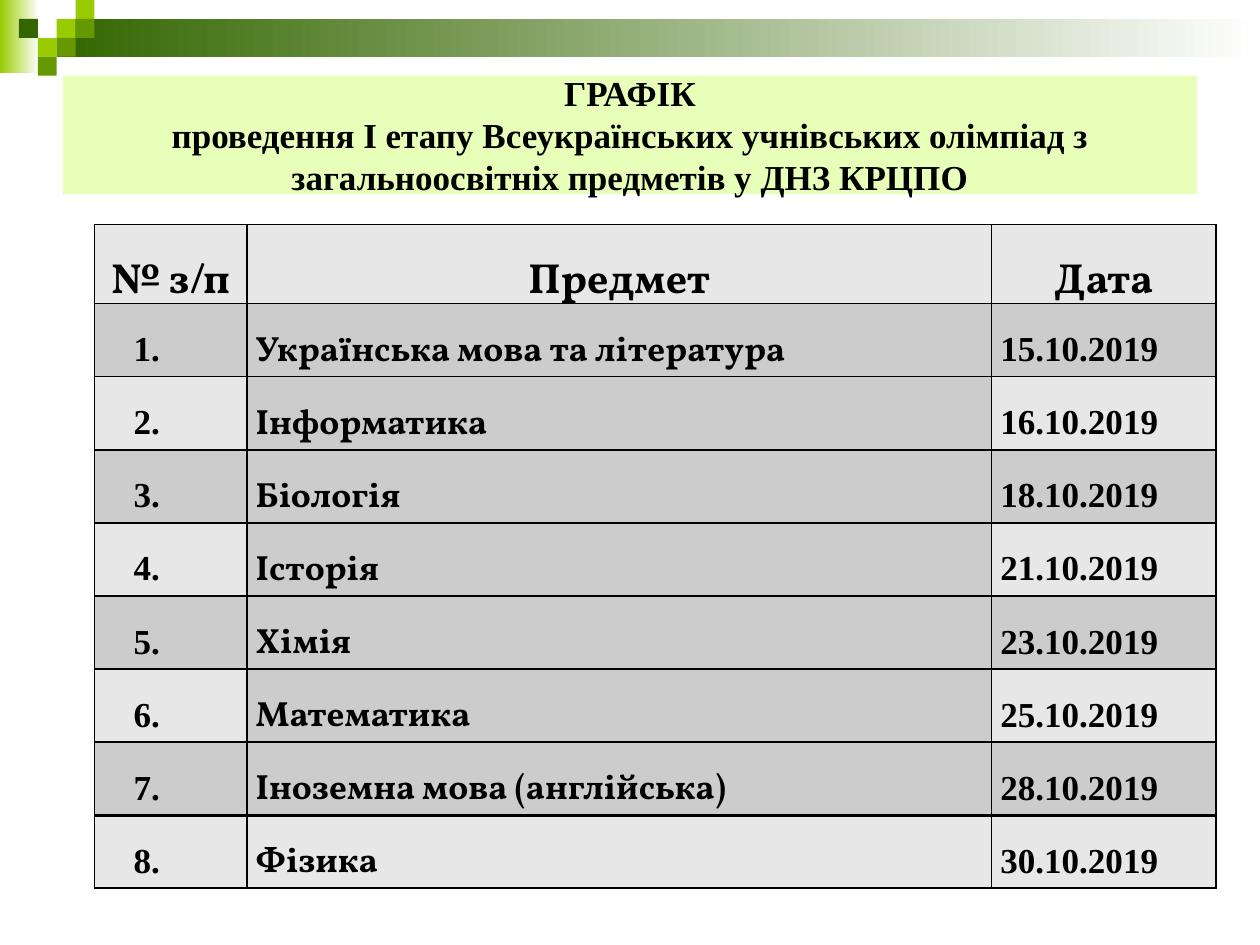
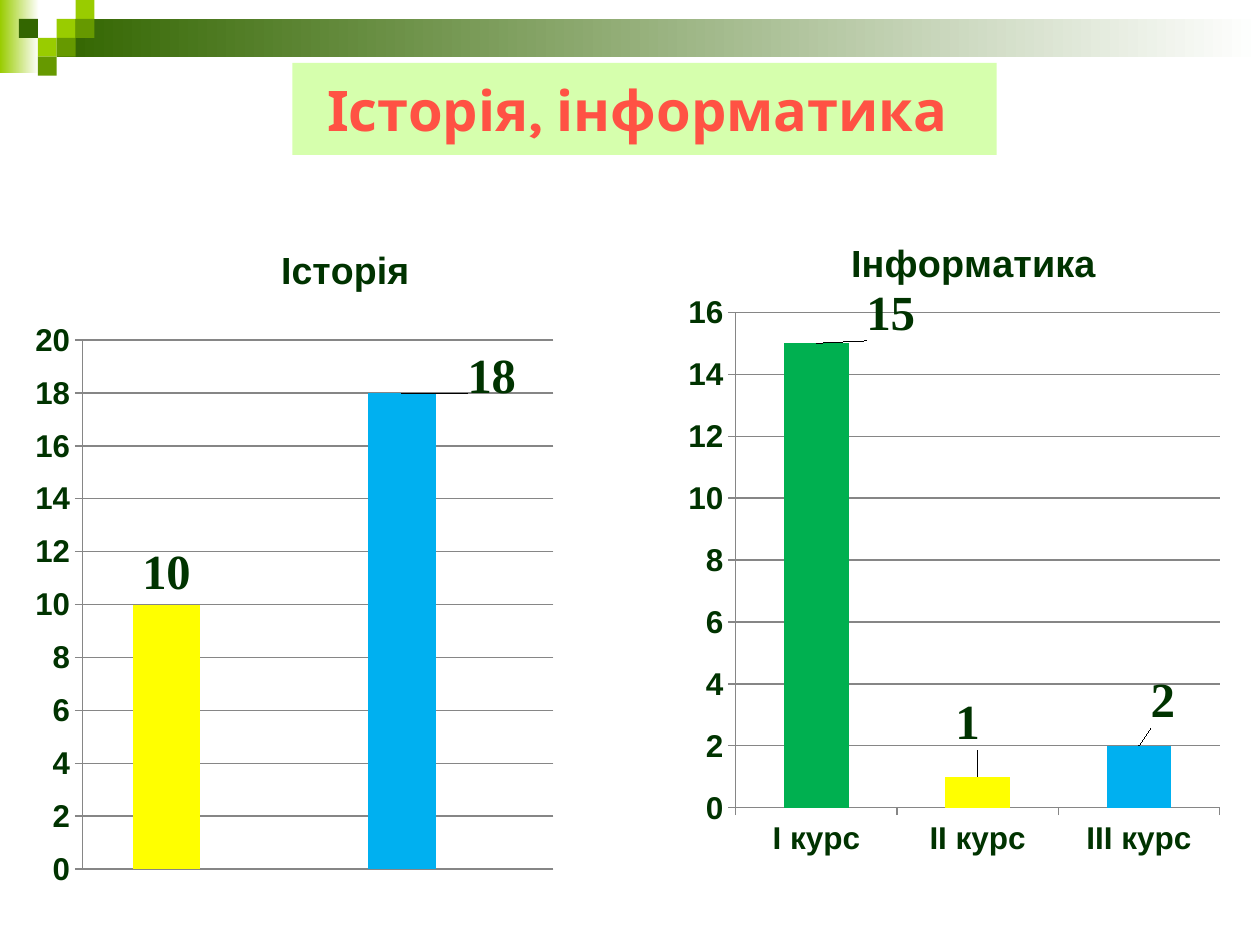
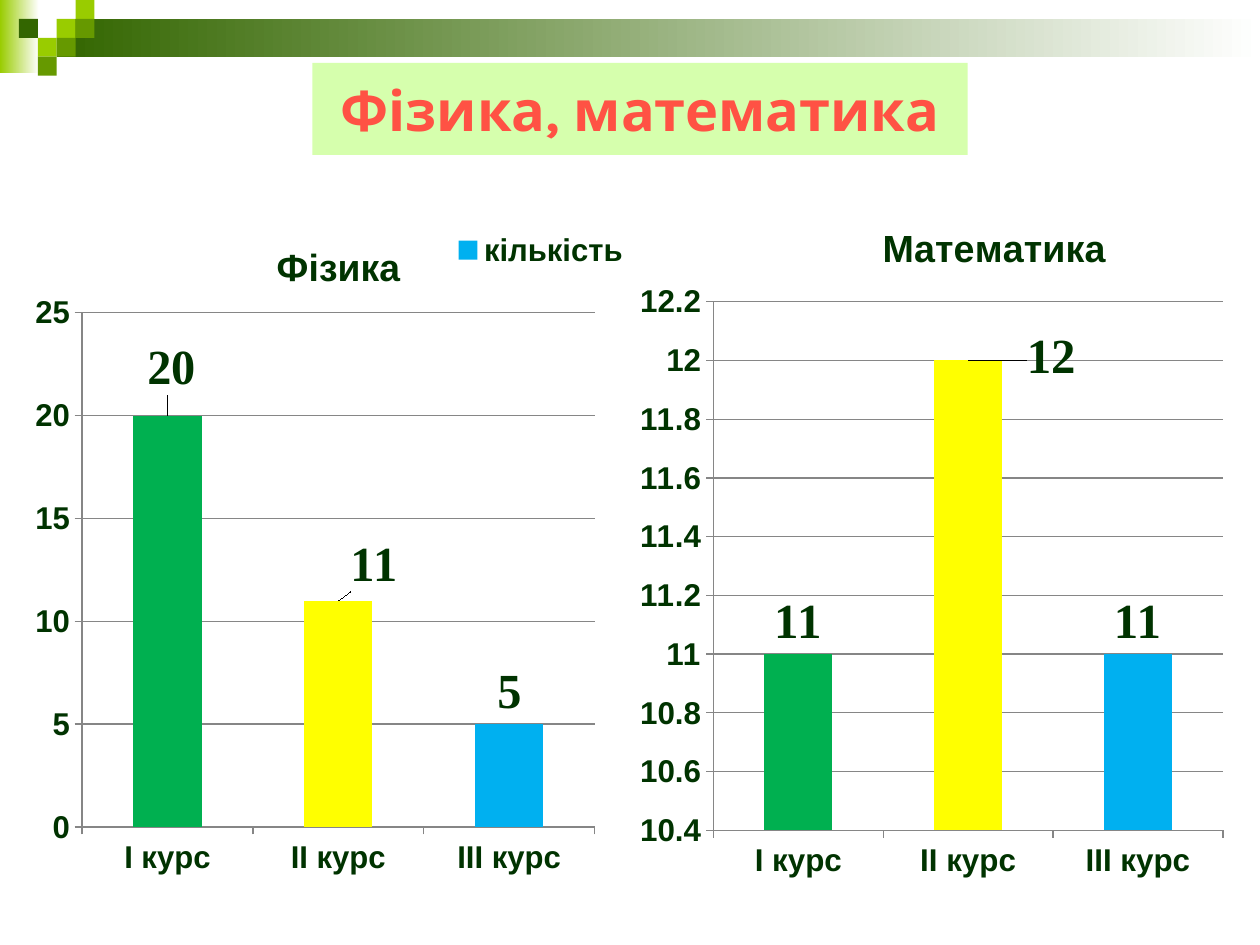
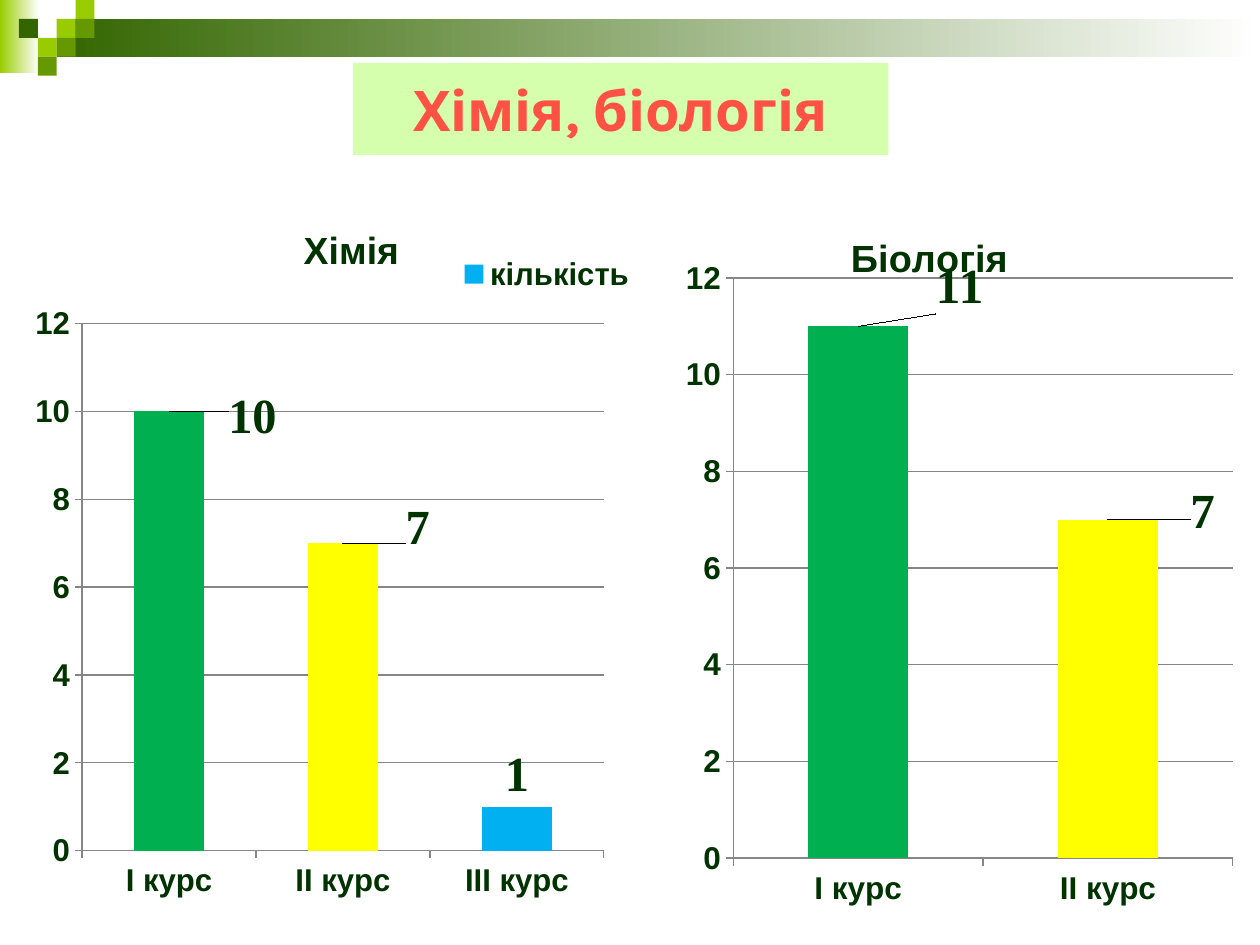
from lxml import etree
from pptx import Presentation
from pptx import util as u
from pptx.chart import data as chart_data
from pptx.dml import color
from pptx.enum import chart as charts, shapes, text
from pptx.oxml import ns

LIME, GRASS, FOREST, WHITE = "99CC00", "669900", "336600", "FFFFFF"
INK, BLACK, GREY = "003300", "000000", "868686"
LIGHT, DARK = "E7E7E7", "CCCCCC"
GREEN, YELLOW, BLUE = "00B050", "FFFF00", "00B0F0"
SERIF, HEADING, BOOK = "Times New Roman", "Karla", "Vollkorn"
COURSES = ["I курс", "II курс", "III курс"]
COURSE_COLORS = [GREEN, YELLOW, BLUE]
SUBJECTS = [
    ("Українська мова та література", "15.10.2019"),
    ("Інформатика", "16.10.2019"),
    ("Біологія", "18.10.2019"),
    ("Історія", "21.10.2019"),
    ("Хімія", "23.10.2019"),
    ("Математика", "25.10.2019"),
    ("Іноземна мова (англійська)", "28.10.2019"),
    ("Фізика", "30.10.2019"),
]


def rgb(value):
    return color.RGBColor.from_string(value)


def box(values):
    return [u.Inches(value) for value in values]


def style_font(font, name, size, ink):
    font.name = name
    font.size = u.Pt(size)
    font.bold = True
    font.color.rgb = rgb(ink)


def add_block(slide, place, fill, fade_to=None):
    block = slide.shapes.add_shape(shapes.MSO_SHAPE.RECTANGLE, *box(place))
    block.shadow.inherit = False
    block.line.fill.background()
    if fade_to:
        block.fill.gradient()
        block.fill.gradient_angle = 0
        for stop, value in zip(block.fill.gradient_stops, (fill, fade_to)):
            stop.color.rgb = rgb(value)
            stop.position = 0 if value == fill else 1
    else:
        block.fill.solid()
        block.fill.fore_color.rgb = rgb(fill)
    return block


def add_header(slide):
    add_block(slide, (0, 0, 0.31, 0.58), LIME, WHITE)
    add_block(slide, (0.45, 0.15, 9.55, 0.3), FOREST, WHITE)
    side = 0.15
    squares = [(3, 1, LIME), (4, 0, LIME), (4, 1, GRASS), (2, 2, LIME),
               (1, 1, FOREST), (3, 2, GRASS), (2, 3, GRASS)]
    for column, row, fill in squares:
        add_block(slide, (column * side, row * side, side, side), fill)


def add_title(slide, words, place, fill, font_name, size, ink):
    title = slide.shapes.add_textbox(*box(place))
    title.fill.solid()
    title.fill.fore_color.rgb = rgb(fill)
    frame = title.text_frame
    frame.word_wrap = True
    frame.vertical_anchor = text.MSO_ANCHOR.MIDDLE
    paragraph = frame.paragraphs[0]
    paragraph.text = words
    paragraph.alignment = text.PP_ALIGN.CENTER
    style_font(paragraph.font, font_name, size, ink)


def set_borders(cell, top, bottom):
    properties = cell._tc.get_or_add_tcPr()
    for side, width in (("L", 1), ("R", 1), ("T", top), ("B", bottom)):
        line = etree.SubElement(properties, ns.qn("a:ln" + side), w=str(u.Pt(width)))
        fill = etree.SubElement(line, ns.qn("a:solidFill"))
        etree.SubElement(fill, ns.qn("a:srgbClr"), val=BLACK)


def fill_cell(cell, words, font_name, size, fill, alignment):
    cell.fill.solid()
    cell.fill.fore_color.rgb = rgb(fill)
    cell.vertical_anchor = text.MSO_ANCHOR.MIDDLE
    cell.margin_left = cell.margin_right = u.Inches(0.07)
    cell.margin_top = cell.margin_bottom = 0
    paragraph = cell.text_frame.paragraphs[0]
    paragraph.text = words
    paragraph.alignment = alignment
    paragraph.line_spacing = 1.5
    style_font(paragraph.font, font_name, size, BLACK)


def add_schedule(slide):
    rows = [("№ з/п", "Предмет", "Дата")]
    rows += [(f"{number}.", *entry) for number, entry in enumerate(SUBJECTS, 1)]
    last = len(rows) - 1
    table = slide.shapes.add_table(len(rows), 3, *box((0.75, 1.78, 8.9, 5.24))).table
    table.first_row = table.horz_banding = False
    for column, width in zip(table.columns, (1.21, 5.91, 1.78)):
        column.width = u.Inches(width)
    for index, row in enumerate(rows):
        table.rows[index].height = u.Inches(0.58 if index else 0.63)
        for column, words in enumerate(row):
            cell = table.cell(index, column)
            set_borders(cell, 2 if index == last else 1, 2 if index == last - 1 else 1)
            shaded = index % 2 == 1 or (column == 1 and 0 < index < last)
            fill = DARK if shaded else LIGHT
            if index == 0:
                fill_cell(cell, words, BOOK, 24, fill, text.PP_ALIGN.CENTER)
            else:
                font_name = BOOK if column == 1 else SERIF
                fill_cell(cell, words, font_name, 20, fill, text.PP_ALIGN.JUSTIFY)
                if column == 0:
                    cell.margin_left = u.Inches(0.31)


def set_layout(element, index, **settings):
    for former in element.findall(ns.qn("c:layout")):
        element.remove(former)
    layout = etree.Element(ns.qn("c:layout"))
    manual = etree.SubElement(layout, ns.qn("c:manualLayout"))
    for name, value in settings.items():
        etree.SubElement(manual, ns.qn("c:" + name), val=str(value))
    element.insert(index, layout)


def edge_layout(element, place, left, top, **size):
    set_layout(element, 1, xMode="edge", yMode="edge",
               x=(left - place[0]) / place[2], y=(top - place[1]) / place[3], **size)


def style_axes(chart, scale):
    for axis in (chart.category_axis, chart.value_axis):
        axis.format.line.color.rgb = rgb(GREY)
        axis.major_tick_mark = charts.XL_TICK_MARK.OUTSIDE
        style_font(axis.tick_labels.font, "Arial", 18, INK)
    values = chart.value_axis
    values.minimum_scale, values.maximum_scale, values.major_unit = scale
    values.has_major_gridlines = True
    values.major_gridlines.format.line.color.rgb = rgb(GREY)


def style_labels(labels):
    style_font(labels.font, SERIF, 28, INK)
    labels.position = charts.XL_LABEL_POSITION.OUTSIDE_END


def add_results(slide, title, title_at, place, plot, values, scale, offsets,
                categories=COURSES, colors=COURSE_COLORS, legend_at=None, spare_series=False):
    source = chart_data.CategoryChartData()
    source.categories = categories[:len(values)]
    source.add_series("кількість" if legend_at else "Series 1", values)
    if spare_series:
        source.add_series("Series 2", [None] * len(values))
    chart = slide.shapes.add_chart(
        charts.XL_CHART_TYPE.COLUMN_CLUSTERED, *box(place), source).chart
    style_font(chart.font, "Arial", 18, INK)
    chart.has_title = True
    heading = chart.chart_title.text_frame.paragraphs[0]
    heading.text = title
    style_font(heading.font, "Arial", 21.6, INK)
    edge_layout(chart.element.find(".//" + ns.qn("c:title")), place, *title_at)
    x, y, width, height = plot
    set_layout(chart.element.find(".//" + ns.qn("c:plotArea")), 0, layoutTarget="inner",
               xMode="edge", yMode="edge", x=x, y=y, w=width, h=height)
    style_axes(chart, scale)

    bars = chart.plots[0]
    bars.gap_width = 150
    bars.overlap = 0
    bars.vary_by_categories = False
    series = bars.series[0]
    series.format.fill.solid()
    series.format.fill.fore_color.rgb = rgb(colors[-1])
    series.data_labels.show_value = True
    style_labels(series.data_labels)
    for index in range(len(values)):
        point = series.points[index]
        point.format.fill.solid()
        point.format.fill.fore_color.rgb = rgb(colors[index])
        if index in offsets:
            style_labels(point.data_label)
    for label in chart.element.iter(ns.qn("c:dLbl")):
        right, down = offsets[int(label.find(ns.qn("c:idx")).get("val"))]
        set_layout(label, 1, x=right / place[2], y=down / place[3])

    chart.has_legend = legend_at is not None
    if legend_at:
        chart.legend.position = charts.XL_LEGEND_POSITION.RIGHT
        chart.legend.include_in_layout = False
        style_font(chart.legend.font, "Arial", 18, INK)
        edge_layout(chart.element.find(".//" + ns.qn("c:legend")), place, *legend_at,
                    w=1.4 / place[2], h=0.35 / place[3])
    return chart


def add_slide(presentation):
    slide = presentation.slides.add_slide(presentation.slide_layouts[6])
    add_header(slide)
    return slide


def add_results_slide(presentation, title, left, width):
    slide = add_slide(presentation)
    add_title(slide, title, (left, 0.5, width, 0.73), "D6FFAD", HEADING, 32, "FF5244")
    return slide


def main():
    presentation = Presentation()
    presentation.slide_width, presentation.slide_height = u.Inches(10), u.Inches(7.5)

    slide = add_slide(presentation)
    add_title(slide, "ГРАФІК\vпроведення I етапу Всеукраїнських учнівських олімпіад з "
              "загальноосвітніх предметів у ДНЗ КРЦПО",
              (0.5, 0.6, 9, 0.94), "E7FFB8", SERIF, 20, BLACK)
    add_schedule(slide)

    slide = add_results_slide(presentation, "Історія, інформатика ", 2.32, 5.59)
    history = add_results(
        slide, "Історія", (2.15, 1.9), (0.28, 1.55, 4.72, 5.75), (0.07, 0.2, 0.8, 0.73),
        [10, 18], (0, 20, 2), {1: (0.72, 0.13)},
        categories=["1", "2"], colors=[YELLOW, BLUE], spare_series=True)
    history.category_axis.visible = False
    add_results(
        slide, "Інформатика", (6.7, 1.84), (5, 1.59, 4.8, 5.7), (0.175, 0.156, 0.8, 0.69),
        [15, 1, 2], (0, 16, 2), {0: (0.59, 0.02), 1: (-0.08, -0.17), 2: (0.19, -0.1)})

    slide = add_results_slide(presentation, "Фізика, математика", 2.48, 5.2)
    add_results(
        slide, "Фізика", (2.1, 1.87), (0.28, 1.47, 4.8, 5.75), (0.064, 0.176, 0.86, 0.71),
        [20, 11, 5], (0, 25, 5), {0: (0.03, -0.12), 1: (0.29, -0.03)},
        legend_at=(3.63, 1.81))
    add_results(
        slide, "Математика", (6.94, 1.72), (5.08, 1.39, 4.72, 5.91), (0.12, 0.17, 0.86, 0.71),
        [11, 12, 11], (10.4, 12.2, 0.2), {1: (0.66, 0.23)})

    slide = add_results_slide(presentation, "Хімія, біологія", 2.8, 4.25)
    add_results(
        slide, "Хімія", (2.32, 1.74), (0.28, 1.49, 4.88, 5.98), (0.064, 0.18, 0.86, 0.7),
        [10, 7, 1], (0, 12, 2), {0: (0.67, 0.3), 1: (0.6, 0.13)},
        legend_at=(3.63, 2))
    add_results(
        slide, "Біологія", (6.7, 1.8), (5.16, 1.31, 4.72, 5.98), (0.14, 0.15, 0.84, 0.77),
        [11, 7], (0, 12, 2), {0: (0.81, -0.06), 1: (0.75, 0.19)})

    presentation.save("out.pptx")


if __name__ == "__main__":
    main()
